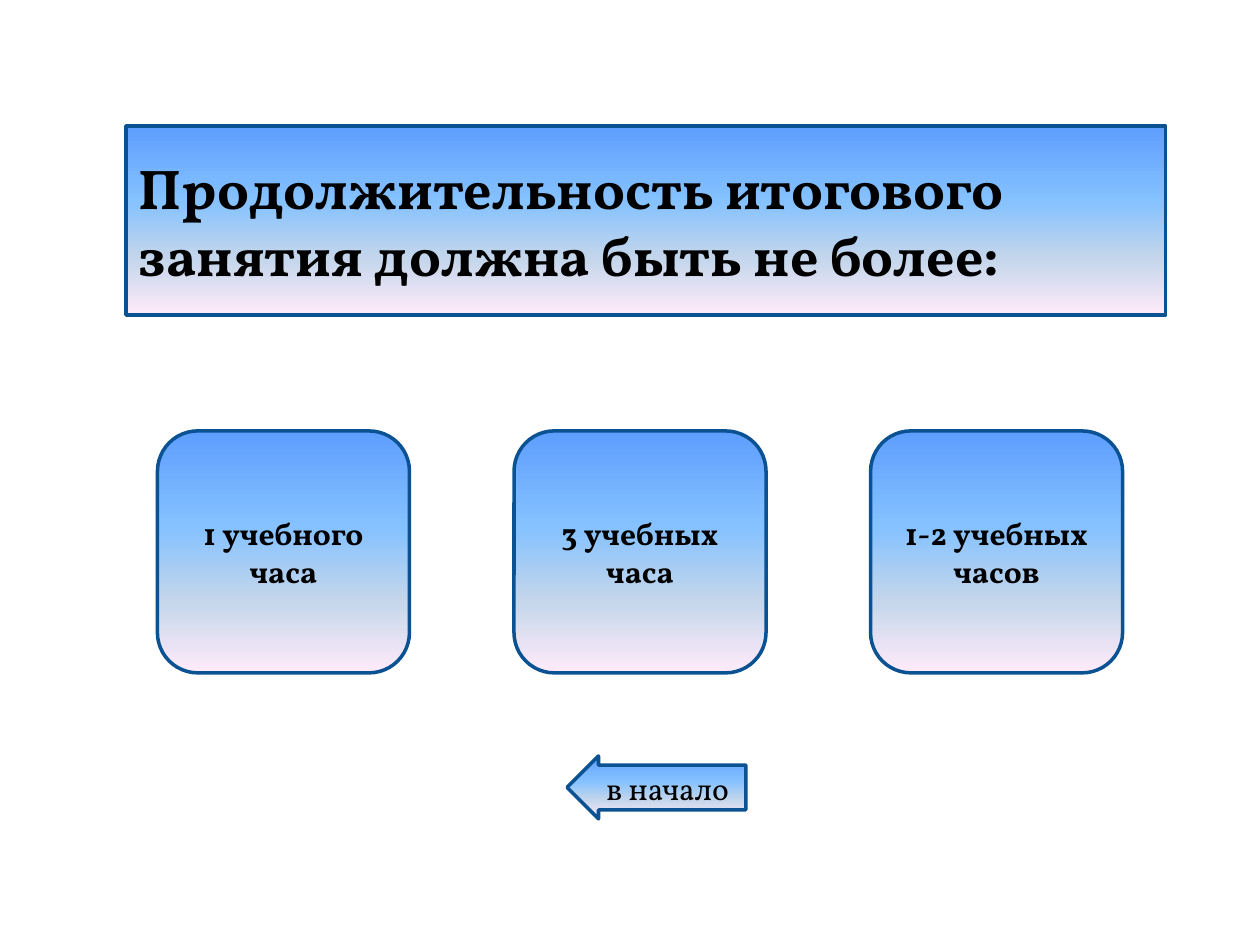
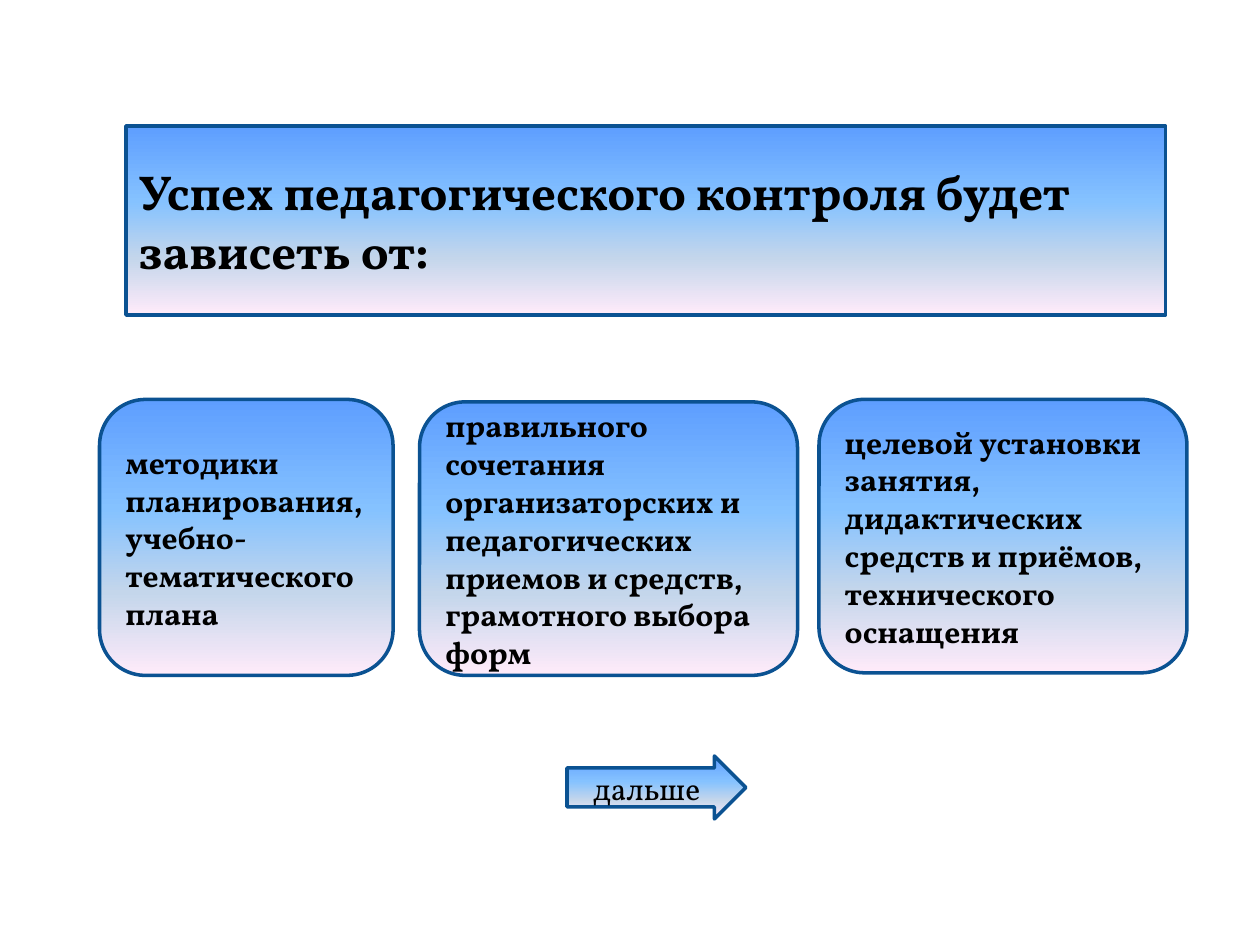
from dataclasses import dataclass

from lxml.etree import SubElement
from pptx import Presentation
from pptx.dml.color import RGBColor
from pptx.enum.shapes import MSO_SHAPE as Shape
from pptx.enum.text import MSO_ANCHOR as Anchor, MSO_AUTO_SIZE as AutoSize, PP_ALIGN as Align
from pptx.oxml.ns import qn
from pptx.util import Inches, Pt


@dataclass(frozen=True)
class Theme:
    font: str = "Vollkorn"
    text: str = "000000"
    line: str = "0B5292"
    line_width: float = 2
    gradient: tuple = ((0, "5E9EFF"), (40, "85C2FF"), (70, "C4D6EB"), (100, "FFEBFA"))
    body_size: int = 18


THEME = Theme()
SLIDE_W, SLIDE_H = 10, 7.5
TITLE_BOX = (1, 1, 8.25, 1.5)
ARROW_BOX = (4.5, 6, 1.42, 0.5)
TITLE_ONLY = 5


def row(left, top, width, height, pitch, count):
    return [(left + i * pitch, top, width, height) for i in range(count)]


SLIDES = [
    {
        "title": "Продолжительность итогового занятия должна быть не более:",
        "title_size": 32,
        "cards": ["1 учебного часа", "3 учебных часа", "1-2 учебных часов"],
        "boxes": row(1.25, 3.42, 2, 1.92, pitch=2.83, count=3),
        "align": Align.CENTER,
        "arrow": ("в начало", Shape.LEFT_ARROW, 0.71),
    },
    {
        "title": "Успех педагогического контроля будет зависеть от:",
        "title_size": 28,
        "cards": [
            "методики планирования, учебно-тематического плана",
            "правильного сочетания организаторских и педагогических "
            "приемов и средств, грамотного выбора форм",
            "целевой установки занятия, дидактических средств и приёмов, "
            "технического\nоснащения",
        ],
        "boxes": [(0.79, 3.17, 2.33, 2.19), (3.33, 3.19, 3, 2.17), (6.5, 3.17, 2.92, 2.17)],
        "align": Align.LEFT,
        "arrow": ("дальше", Shape.RIGHT_ARROW, 0.62),
    },
]


def paint(sp):
    """Give a shape the vertical theme gradient and outline."""
    sp.fill.gradient()
    sp.fill.gradient_angle = 270
    stops = sp._element.spPr.find(qn("a:gradFill")).find(qn("a:gsLst"))
    for stop in list(stops):
        stops.remove(stop)
    for percent, color in THEME.gradient:
        stop = SubElement(stops, qn("a:gs"), pos=str(percent * 1000))
        SubElement(stop, qn("a:srgbClr"), val=color)
    sp.line.color.rgb = RGBColor.from_string(THEME.line)
    sp.line.width = Pt(THEME.line_width)


def write(sp, text, size, align, bold=True):
    tf = sp.text_frame
    tf.text = text
    tf.word_wrap = True
    tf.auto_size = AutoSize.NONE
    tf.vertical_anchor = Anchor.MIDDLE
    for p in tf.paragraphs:
        p.alignment = align
        for r in p.runs:
            r.font.name = THEME.font
            r.font.size = Pt(size)
            r.font.bold = bold
            r.font.color.rgb = RGBColor.from_string(THEME.text)


def add_title(slide, text, size):
    sp = slide.shapes.title
    sp.left, sp.top, sp.width, sp.height = map(Inches, TITLE_BOX)
    geometry = SubElement(sp._element.spPr, qn("a:prstGeom"), prst="roundRect")
    SubElement(geometry, qn("a:avLst"))
    paint(sp)
    write(sp, text, size, Align.LEFT)


def add_block(slide, kind, box, text, align, bold=True):
    sp = slide.shapes.add_shape(kind, *map(Inches, box))
    sp.shadow.inherit = False
    paint(sp)
    write(sp, text, THEME.body_size, align, bold)
    return sp


def main():
    prs = Presentation()
    prs.slide_width, prs.slide_height = Inches(SLIDE_W), Inches(SLIDE_H)
    for content in SLIDES:
        slide = prs.slides.add_slide(prs.slide_layouts[TITLE_ONLY])
        add_title(slide, content["title"], content["title_size"])
        for text, box in zip(content["cards"], content["boxes"]):
            add_block(slide, Shape.ROUNDED_RECTANGLE, box, text, content["align"])
        label, kind, shaft = content["arrow"]
        arrow = add_block(slide, kind, ARROW_BOX, label, Align.CENTER, bold=False)
        arrow.adjustments[0] = shaft
    prs.save("out.pptx")


if __name__ == "__main__":
    main()
